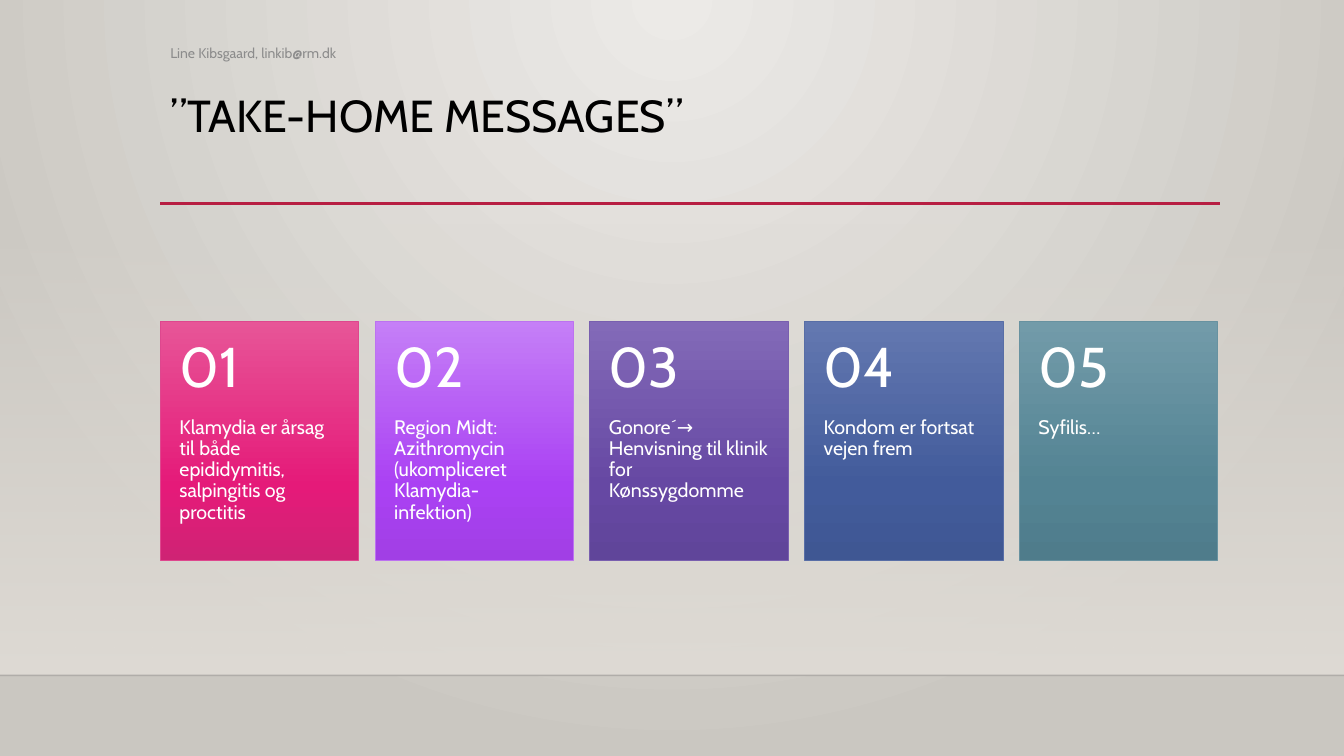
from lxml.etree import SubElement
from pptx import Presentation
from pptx.dml.color import RGBColor
from pptx.enum.shapes import MSO_CONNECTOR as CONNECTOR, MSO_SHAPE as SHAPE
from pptx.enum.text import MSO_ANCHOR as ANCHOR, MSO_AUTO_SIZE as AUTO_SIZE, PP_ALIGN as ALIGN
from pptx.oxml.ns import qn
from pptx.util import Inches, Pt

hex_color = RGBColor.from_string


def gradient(owner, fill, stops, radial=False):
    """Fill with (position %, colour, opacity %) stops, downwards or from the top centre."""
    fill.gradient()
    grad = next(owner.element.iter(qn("a:gradFill")))
    for child in list(grad):
        grad.remove(child)
    stop_list = SubElement(grad, qn("a:gsLst"))
    for position, color, opacity in stops:
        stop = SubElement(stop_list, qn("a:gs"), pos=str(position * 1000))
        tint = SubElement(stop, qn("a:srgbClr"), val=color)
        if opacity < 100:
            SubElement(tint, qn("a:alpha"), val=str(opacity * 1000))
    if radial:
        circle = SubElement(grad, qn("a:path"), path="circle")
        SubElement(circle, qn("a:fillToRect"), l="43000", t="0", r="43000", b="100000")
    else:
        SubElement(grad, qn("a:lin"), ang="5400000", scaled="0")


def write(box, text, size, color, anchor=ANCHOR.TOP, insets=(0.1, 0.05, 0.1, 0.05), spacing=0.9):
    frame = box.text_frame
    frame.word_wrap = True
    frame.auto_size = AUTO_SIZE.NONE
    frame.vertical_anchor = anchor
    (frame.margin_left, frame.margin_top,
     frame.margin_right, frame.margin_bottom) = map(Inches, insets)
    paragraph = frame.paragraphs[0]
    paragraph.text = text
    paragraph.alignment = ALIGN.LEFT
    paragraph.line_spacing = spacing
    font = paragraph.runs[0].font
    font.name, font.size = "Cabin", Pt(size)
    font.color.rgb = hex_color(color)


prs = Presentation()
prs.slide_width, prs.slide_height = Inches(13.33), Inches(7.5)
slide = prs.slides.add_slide(prs.slide_layouts[5])
shapes = slide.shapes
title = shapes.title

# Background and the light wall above the floor
gradient(slide, slide.background.fill, [(0, "ECEAE7", 100), (100, "CAC7C1", 100)], radial=True)
wall = shapes.add_shape(SHAPE.RECTANGLE, 0, Inches(2.21), Inches(13.33), Inches(4.49))
wall.shadow.inherit = False
wall.line.fill.background()
gradient(wall, wall.fill, [(0, "DFDBD5", 0), (100, "DFDBD5", 100)])

# Floor edge and title rule
for left, right, y, color, width, opacity in [
    (0, 13.33, 6.7, "000001", 1, 20),
    (1.59, 12.1, 2.02, "B71E42", 2.5, 100),
]:
    rule = shapes.add_connector(CONNECTOR.STRAIGHT, Inches(left), Inches(y), Inches(right), Inches(y))
    rule.line.color.rgb = hex_color(color)
    rule.line.width = Pt(width)
    tint = next(rule.element.iter(qn("a:srgbClr")))
    SubElement(tint, qn("a:alpha"), val=str(opacity * 1000))
    SubElement(rule.element.spPr, qn("a:effectLst"))

# Title and author
title.left, title.top = Inches(1.59), Inches(0.88)
title.width, title.height = Inches(10.5), Inches(1.15)
write(title, "”TAKE-HOME MESSAGES”", 32, "000000")
author = shapes.add_textbox(Inches(1.59), Inches(0.36), Inches(6.49), Inches(0.34))
write(author, "Line Kibsgaard, linkib@rm.dk", 10, "8C8C8C", anchor=ANCHOR.MIDDLE, spacing=1.0)

# Message cards: text, gradient from top to bottom, outline
messages = [
    ("Klamydia er årsag til både epididymitis, salpingitis og proctitis",
     ("E75597", "E51A79", "CF2374"), "DE478E"),
    ("Region Midt: Azithromycin (ukompliceret Klamydia-infektion)",
     ("C57FF7", "AA41F3", "A13FE5"), "BC72F0"),
    ("Gonore´→ Henvisning til klinik for Kønssygdomme",
     ("836AB8", "6648A3", "60459A"), "795FAF"),
    ("Kondom er fortsat vejen frem",
     ("6378B0", "425B9B", "3F5793"), "586EA6"),
    ("Syfilis…",
     ("729BA9", "538393", "4F7C8B"), "6892A0"),
]
card_width, card_pitch = Inches(1.97), Inches(2.13)
card_top, number_height, message_height = Inches(3.19), Inches(0.95), Inches(1.42)

for index, (message, (top, middle, bottom), outline) in enumerate(messages):
    left = Inches(1.59) + index * card_pitch
    card = shapes.add_shape(SHAPE.RECTANGLE, left, card_top, card_width, number_height + message_height)
    card.shadow.inherit = False
    gradient(card, card.fill, [(0, top, 100), (69, middle, 100), (100, bottom, 100)])
    card.line.color.rgb = hex_color(outline)
    card.line.width = Pt(0.75)

    body = shapes.add_textbox(left, card_top + number_height, card_width, message_height)
    write(body, message, 14, "FFFFFF", insets=(0.19, 0, 0.19, 0.36))
    number = shapes.add_textbox(left, card_top, card_width, number_height)
    write(number, f"{index + 1:02}", 40, "FFFFFF", anchor=ANCHOR.MIDDLE, insets=(0.19, 0.18, 0.19, 0.18))

prs.save("out.pptx")
